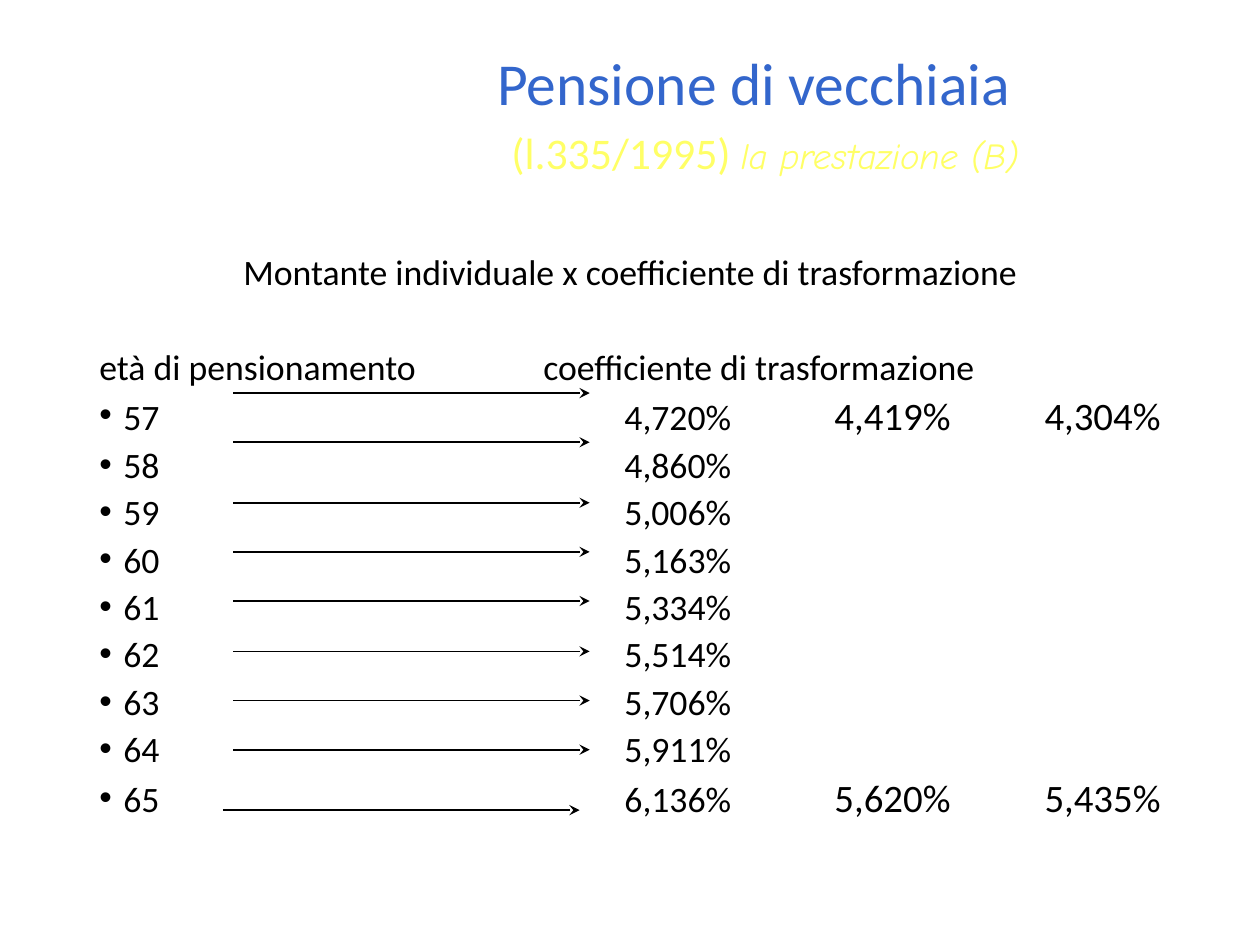
from lxml import etree
from pptx import Presentation
from pptx.dml.color import RGBColor
from pptx.enum.shapes import MSO_CONNECTOR
from pptx.enum.text import MSO_ANCHOR, PP_ALIGN
from pptx.oxml.ns import qn
from pptx.util import Inches, Pt

STRAIGHT = MSO_CONNECTOR.STRAIGHT
MIDDLE, TOP = MSO_ANCHOR.MIDDLE, MSO_ANCHOR.TOP
LEFT, CENTER = PP_ALIGN.LEFT, PP_ALIGN.CENTER

BLUE = RGBColor(0x33, 0x66, 0xCC)
YELLOW = RGBColor(0xFF, 0xFF, 0x66)
BLACK = RGBColor(0, 0, 0)

BODY_SIZE = Pt(20.4)
UPDATED_SIZE = Pt(22.2)
HANGING = Inches(0.19)
TAB_SPACING = Inches(5 / 6)

# Retirement age, coefficient, later updates of the coefficient
COEFFICIENTS = [
    ("57", "4,720%", ["4,419%", "4,304%"]),
    ("58", "4,860%", []),
    ("59", "5,006%", []),
    ("60", "5,163%", []),
    ("61", "5,334%", []),
    ("62", "5,514%", []),
    ("63", "5,706%", []),
    ("64", "5,911%", []),
    ("65", "6,136%", ["5,620%", "5,435%"]),
]
# Left end and height of each arrow, from the corner of the body box
ARROW_STARTS = [
    (1.16, 1.12), (1.16, 1.51), (1.16, 1.99), (1.16, 2.38), (1.16, 2.77),
    (1.16, 3.17), (1.16, 3.56), (1.16, 3.95), (1.08, 4.43),
]
ARROW_LENGTH = 2.83


def add_text_frame(slide, left, top, width, height, anchor):
    box = slide.shapes.add_textbox(Inches(left), Inches(top), Inches(width), Inches(height))
    frame = box.text_frame
    frame.word_wrap = True
    frame.vertical_anchor = anchor
    return frame


def set_font(font, size, color, name="Calibri"):
    font.size = size
    font.color.rgb = color
    font.name = name


def add_title(slide, left, top, width, height):
    frame = add_text_frame(slide, left, top, width, height, MIDDLE)
    heading = frame.paragraphs[0]
    heading.text = "Pensione di vecchiaia"
    heading.line_spacing = 0.9
    set_font(heading.font, Pt(34), BLUE)

    subtitle = frame.add_paragraph()
    subtitle.line_spacing = 0.9
    subtitle.space_before = Pt(7.5)
    subtitle._p.get_or_add_pPr().set("marL", str(Inches(0.11)))
    law = subtitle.add_run()
    law.text = "(l.335/1995) "
    set_font(law.font, Pt(25), YELLOW)
    topic = subtitle.add_run()
    topic.text = "la prestazione (B)"
    set_font(topic.font, Pt(21), YELLOW, "Comic Neue")
    topic.font.italic = True


def format_body_paragraph(paragraph, space_before, alignment=LEFT, bullet=False):
    paragraph.alignment = alignment
    paragraph.line_spacing = 0.8
    paragraph.space_before = space_before
    properties = paragraph._p.get_or_add_pPr()
    properties.set("marL", str(HANGING))
    properties.set("indent", str(-HANGING))
    properties.set("defTabSz", str(TAB_SPACING))
    if bullet:
        etree.SubElement(properties, qn("a:buFont")).set("typeface", "Arial")
        etree.SubElement(properties, qn("a:buChar")).set("char", "•")
    else:
        etree.SubElement(properties, qn("a:buNone"))
    set_font(paragraph.font, BODY_SIZE, BLACK)


def add_run(paragraph, text, size):
    run = paragraph.add_run()
    run.text = text
    set_font(run.font, size, BLACK)


def add_coefficients(slide, left, top, width, height):
    frame = add_text_frame(slide, left, top, width, height, TOP)
    formula = frame.paragraphs[0]
    format_body_paragraph(formula, Pt(0), CENTER)
    add_run(formula, "Montante individuale x coefficiente di trasformazione", BODY_SIZE)

    header = frame.add_paragraph()
    format_body_paragraph(header, Pt(34.6))
    add_run(header, "età di pensionamento\t\tcoefficiente di trasformazione", BODY_SIZE)

    for age, coefficient, updates in COEFFICIENTS:
        row = frame.add_paragraph()
        format_body_paragraph(row, Pt(7.5), bullet=True)
        add_run(row, age + "\t" * 5 + coefficient, BODY_SIZE)
        if updates:
            add_run(row, "\t" + "\t".join(updates), UPDATED_SIZE)

    for start, height_on_body in ARROW_STARTS:
        add_arrow(slide, left + start, top + height_on_body, ARROW_LENGTH)


def add_arrow(slide, left, top, length):
    arrow = slide.shapes.add_connector(
        STRAIGHT, Inches(left), Inches(top), Inches(left + length), Inches(top))
    arrow.line.color.rgb = BLACK
    arrow.line.width = Pt(1)
    etree.SubElement(arrow.line._get_or_add_ln(), qn("a:tailEnd")).set("type", "stealth")
    etree.SubElement(arrow._element.spPr, qn("a:effectLst"))


def main():
    presentation = Presentation()
    presentation.slide_width = Inches(10)
    presentation.slide_height = Inches(7.5)
    slide = presentation.slides.add_slide(presentation.slide_layouts[6])
    add_title(slide, 3.85, 0.3, 5.19, 1.25)
    add_coefficients(slide, 0.69, 2, 8.62, 4.76)
    presentation.save("out.pptx")


if __name__ == "__main__":
    main()
